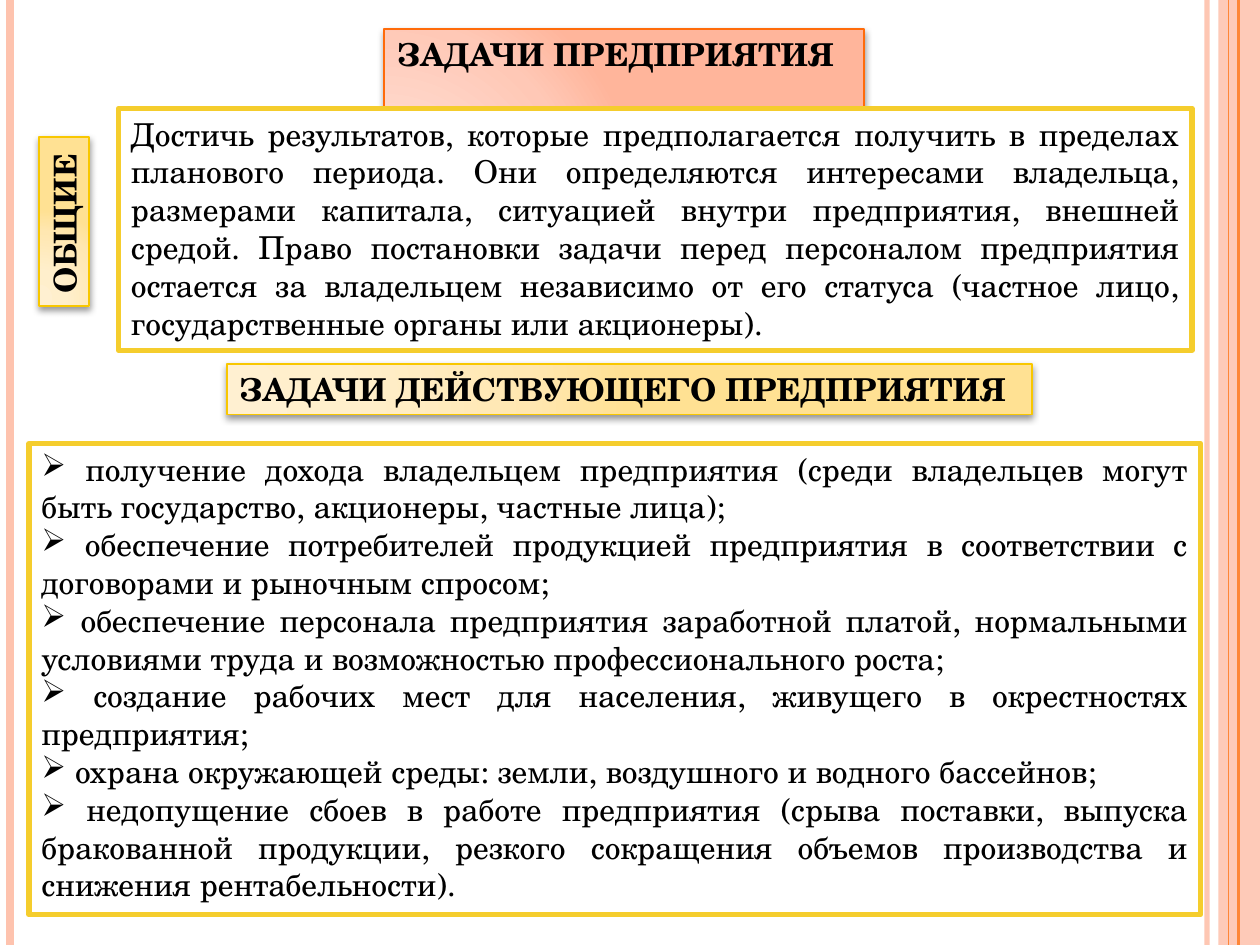
from pptx import Presentation
from pptx.dml.color import RGBColor
from pptx.enum.shapes import MSO_CONNECTOR, MSO_SHAPE
from pptx.enum.text import MSO_ANCHOR, MSO_AUTO_SIZE, PP_ALIGN
from pptx.oxml import parse_xml
from pptx.oxml.ns import nsdecls, qn
from pptx.util import Inches, Pt
from lxml.etree import SubElement

FONT = "TeX Gyre Schola"
WIDE, HIGH = 10, 7.5
HEX = {
    "pale": "FEC3AE", "deep": "FE8637", "white": "FFFFFF", "ink": "000000",
    "frame": "F5CD2D", "coral": "FF6B0A", "gold": "F8C700",
}
FADES = {
    "coral": ["FFDED5", "FFDBD0", "FFC8B6", "FFB59B"],
    "gold": ["FFF0D1", "FFEFCC", "FFE7B1", "FFE193"],
}
STOPS = [0, 30, 75, 100]
BAND = (9.67, 0, 0.33, HIGH)
RULES = [
    (9.58, "pale", 3, 93), (0.08, "pale", 4.5, 100),
    (9.83, "deep", 1.5, 100), (9.75, "deep", 0.75, 100),
]
TITLE = ("ЗАДАЧИ ПРЕДПРИЯТИЯ\u00a0", (3.05, 0.23, 3.81, 0.4), "coral", 0)
LABELS = [
    ("ОБЩИЕ", (-0.16, 1.56, 1.34, 0.4), "gold", 270),
    ("ЗАДАЧИ ДЕЙСТВУЮЩЕГО ПРЕДПРИЯТИЯ", (1.8, 2.89, 6.39, 0.4), "gold", 0),
]
GOALS = [
    "Достичь результатов, которые предполагается получить в пределах планового "
    "периода. Они определяются интересами владельца, размерами капитала, ситуацией "
    "внутри предприятия, внешней средой. Право постановки задачи перед персоналом "
    "предприятия остается за владельцем независимо от его статуса (частное лицо, "
    "государственные органы или акционеры).",
]
TASKS = [
    " получение дохода владельцем предприятия (среди владельцев могут быть "
    "государство, акционеры, частные лица);",
    " обеспечение потребителей продукцией предприятия в соответствии с договорами "
    "и рыночным спросом;",
    " обеспечение персонала предприятия заработной платой, нормальными условиями "
    "труда и возможностью профессионального роста;",
    " создание рабочих мест для населения, живущего в окрестностях предприятия;",
    " охрана окружающей среды: земли, воздушного и водного бассейнов;",
    " недопущение сбоев в работе предприятия (срыва поставки, выпуска бракованной "
    "продукции, резкого сокращения объемов производства и снижения рентабельности).",
]
PANELS = [
    (GOALS, (0.94, 0.86, 8.52, 1.92), ""),
    (TASKS, (0.23, 3.52, 9.3, 3.74), "➢"),
]


def tint(name):
    return RGBColor.from_string(HEX[name])


def fade(shape, alpha):
    for node in shape._element.spPr.iter(qn("a:srgbClr")):
        SubElement(node, qn("a:alpha"), val=str(alpha * 1000))


def outline(shape, name, width):
    shape.line.color.rgb = tint(name)
    shape.line.width = Pt(width)


def place(shape, rect):
    shape.left, shape.top, shape.width, shape.height = map(Inches, rect)


def write(shape, texts, bold, align, wrap, mark=""):
    frame = shape.text_frame
    frame.word_wrap = wrap
    frame.auto_size = MSO_AUTO_SIZE.SHAPE_TO_FIT_TEXT
    frame.vertical_anchor = MSO_ANCHOR.TOP
    for i, text in enumerate(texts):
        para = frame.add_paragraph() if i else frame.paragraphs[0]
        para.text = text
        para.alignment = align
        font = para.font
        font.name, font.size, font.bold = FONT, Pt(18), bold
        font.color.rgb = tint("ink")
        if mark:
            props = para._p.get_or_add_pPr()
            props.set("marL", "0")
            props.set("indent", "0")
            bullet = parse_xml(f'<a:buChar {nsdecls("a")} char="{mark}"/>')
            props.find(qn("a:defRPr")).addprevious(bullet)


def badge(shape, text, rect, name, turn):
    place(shape, rect)
    shape.rotation = turn
    outline(shape, name, 1)
    stops = "".join(
        f'<a:gs pos="{pos * 1000}"><a:srgbClr val="{code}"/></a:gs>'
        for pos, code in zip(STOPS, FADES[name]))
    grad = parse_xml(
        f'<a:gradFill {nsdecls("a")} rotWithShape="1"><a:gsLst>{stops}</a:gsLst>'
        '<a:path path="circle"><a:fillToRect l="5000" t="100000" r="120000" '
        'b="10000"/></a:path></a:gradFill>')
    shade = parse_xml(
        f'<a:effectLst {nsdecls("a")}><a:outerShdw blurRad="{Pt(4)}" '
        f'dist="{Pt(2)}" dir="5400000" rotWithShape="0"><a:srgbClr '
        f'val="{HEX["ink"]}"><a:alpha val="40000"/></a:srgbClr>'
        '</a:outerShdw></a:effectLst>')
    props = shape._element.spPr
    for old in props.findall(qn("a:noFill")):
        props.remove(old)
    props.find(qn("a:ln")).addprevious(grad)
    props.append(shade)
    write(shape, [text], True, PP_ALIGN.LEFT, False)


def main():
    deck = Presentation()
    deck.slide_width, deck.slide_height = Inches(WIDE), Inches(HIGH)
    slide = deck.slides.add_slide(deck.slide_layouts[5])
    shapes = slide.shapes

    band = shapes.add_shape(MSO_SHAPE.RECTANGLE, *map(Inches, BAND))
    band.shadow.inherit = False
    band.fill.solid()
    band.fill.fore_color.rgb = tint("pale")
    band.line.fill.background()
    fade(band, 87)

    for x, name, width, alpha in RULES:
        rule = shapes.add_connector(
            MSO_CONNECTOR.STRAIGHT, Inches(x), 0, Inches(x), Inches(HIGH))
        outline(rule, name, width)
        SubElement(rule._element.spPr, qn("a:effectLst"))
        if alpha < 100:
            fade(rule, alpha)

    badge(shapes.title, *TITLE)
    for label in LABELS:
        badge(shapes.add_textbox(0, 0, 0, 0), *label)

    for texts, rect, mark in PANELS:
        panel = shapes.add_textbox(*map(Inches, rect))
        panel.fill.solid()
        panel.fill.fore_color.rgb = tint("white")
        outline(panel, "frame", 3)
        write(panel, texts, False, PP_ALIGN.JUSTIFY, True, mark)

    deck.save("out.pptx")


if __name__ == "__main__":
    main()
